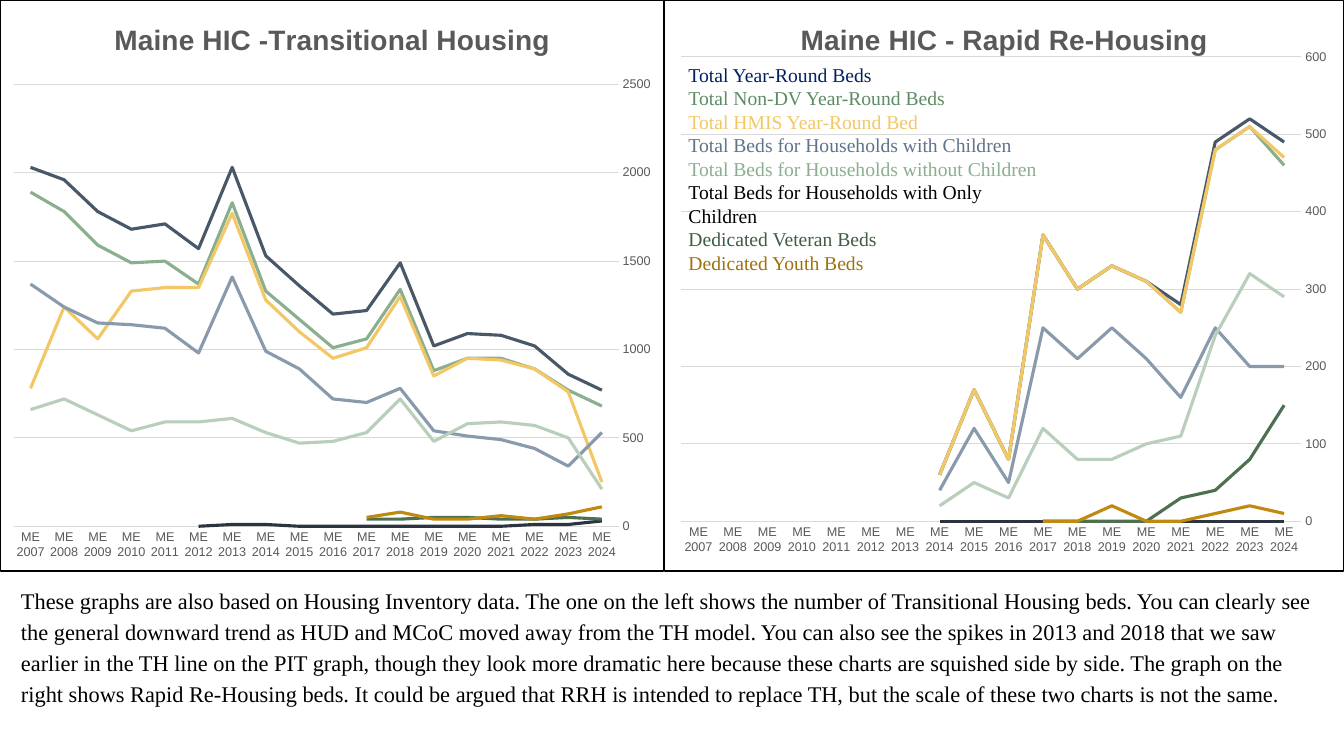
from lxml import etree
from pptx import Presentation
from pptx import util as u
from pptx.chart import data as cd
from pptx.dml.color import RGBColor
from pptx.enum import chart as ec
from pptx.oxml import parse_xml
from pptx.oxml.ns import nsdecls, qn

# Content
YEARS = [f"ME {year}" for year in range(2024, 2006, -1)]
HUES = ["495869", "8AAF8E", "F3C766", "899AAD",
        "B9CFBB", "2C353F", "4C7050", "C0890F"]
# Values run from 2024 back; years without data are left off the end
CHARTS = [
    {"title": "Maine HIC -Transitional Housing",
     "left": 0, "width": 6.59, "top": 2500, "step": 500, "plot": None,
     "rows": [
         [770, 860, 1020, 1080, 1090, 1020, 1490, 1220, 1200,
          1360, 1530, 2030, 1570, 1710, 1680, 1780, 1960, 2030],
         [680, 770, 890, 950, 950, 880, 1340, 1060, 1010,
          1170, 1330, 1830, 1370, 1500, 1490, 1590, 1780, 1890],
         [250, 760, 890, 940, 950, 850, 1300, 1010, 950,
          1100, 1280, 1770, 1350, 1350, 1330, 1060, 1240, 780],
         [530, 340, 440, 490, 510, 540, 780, 700, 720,
          890, 990, 1410, 980, 1120, 1140, 1150, 1240, 1370],
         [210, 500, 570, 590, 580, 480, 720, 530, 480,
          470, 530, 610, 590, 590, 540, 630, 720, 660],
         [30, 10, 10, 0, 0, 0, 0, 0, 0, 0, 10, 10, 0],
         [40, 50, 40, 40, 50, 50, 40, 40],
         [110, 70, 40, 60, 40, 40, 80, 50]]},
    {"title": "Maine HIC - Rapid Re-Housing",
     "left": 6.59, "width": 6.74, "top": 600, "step": 100,
     "plot": {"x": 0.024, "y": 0.099, "w": 0.914, "h": 0.814},
     "rows": [
         [490, 520, 490, 280, 310, 330, 300, 370, 80, 170, 60],
         [460, 510, 480, 270, 310, 330, 300, 370, 80, 170, 60],
         [470, 510, 480, 270, 310, 330, 300, 370, 80, 170, 60],
         [200, 200, 250, 160, 210, 250, 210, 250, 50, 120, 40],
         [290, 320, 240, 110, 100, 80, 80, 120, 30, 50, 20],
         [0] * 11,
         [150, 80, 40, 30, 0, 0, 0, 0],
         [10, 20, 10, 0, 0, 20, 0, 0]]},
]
KEY = [
    ("Total Year-Round Beds", "002060"),
    ("Total Non-DV Year-Round Beds", "5F8B64"),
    ("Total HMIS Year-Round Bed", "F3C766"),
    ("Total Beds for Households with Children", "5F7389"),
    ("Total Beds for Households without Children", "8AAF8E"),
    ("Total Beds for Households with Only Children", "000000"),
    ("Dedicated Veteran Beds", "405D43"),
    ("Dedicated Youth Beds", "A0720D"),
]
NOTE = (
    "These graphs are also based on Housing Inventory data. The one on the "
    "left shows the number of Transitional Housing beds. You can clearly see "
    "the general downward trend as HUD and MCoC moved away from the TH model. "
    "You can also see the spikes in 2013 and 2018 that we saw earlier in the "
    "TH line on the PIT graph, though they look more dramatic here because "
    "these charts are squished side by side. The graph on the right shows "
    "Rapid Re-Housing beds. It could be argued that RRH is intended to replace "
    "TH, but the scale of these two charts is not the same."
)
SERIES = [
    "Total Year-Round Beds", "Total Non-DV Year-Round Beds",
]
GREY, RULE = "595959", "D9D9D9"


def put(item, **vals):
    for name, val in vals.items():
        setattr(item, name, val)


def ink(font, hue, **vals):
    put(font, **vals)
    font.color.rgb = RGBColor.from_string(hue)


def rule(line, hue, width):
    ink(line, hue, width=u.Pt(width))


def frame(chart):
    """Give the chart area a thin black border."""
    edge = parse_xml(
        f'<c:spPr {nsdecls("c", "a")}><a:ln w="9525"><a:solidFill>'
        '<a:srgbClr val="000000"/></a:solidFill></a:ln></c:spPr>')
    chart.element.find(qn("c:chart")).addnext(edge)


def place(chart, plot):
    """Fix the inner plot area as shares of the chart."""
    area = chart.element.find(".//" + qn("c:plotArea"))
    for old in area.findall(qn("c:layout")):
        area.remove(old)
    lay = etree.Element(qn("c:layout"))
    box = etree.SubElement(lay, qn("c:manualLayout"))
    tags = {"layoutTarget": "inner", "xMode": "edge", "yMode": "edge", **plot}
    for tag, val in tags.items():
        etree.SubElement(box, qn("c:" + tag)).set("val", str(val))
    area.insert(0, lay)


def draw(slide, info):
    data = cd.CategoryChartData()
    data.categories = YEARS
    for (name, _), row in zip(KEY, info["rows"]):
        data.add_series(name, row + [None] * (len(YEARS) - len(row)))
    chart = slide.shapes.add_chart(
        ec.XL_CHART_TYPE.LINE, u.Inches(info["left"]), 0,
        u.Inches(info["width"]), u.Inches(5.67), data).chart
    chart.has_legend = False
    ink(chart.font, "000000", name="Arial", size=u.Pt(10))

    # Title
    chart.has_title = True
    para = chart.chart_title.text_frame.paragraphs[0]
    run = para.add_run()
    run.text = info["title"]
    ink(run.font, GREY, name="Arial", size=u.Pt(20), bold=True)

    # Axes: years run right to left, so values sit on the right
    cats, vals = chart.category_axis, chart.value_axis
    for axis in (cats, vals):
        put(axis, major_tick_mark=ec.XL_TICK_MARK.NONE,
            minor_tick_mark=ec.XL_TICK_MARK.NONE)
        ink(axis.tick_labels.font, GREY, name="Arial", size=u.Pt(9))
    put(cats, reverse_order=True, has_major_gridlines=False)
    put(vals, minimum_scale=0, maximum_scale=info["top"],
        major_unit=info["step"], has_major_gridlines=True)
    rule(cats.format.line, RULE, 0.75)
    rule(vals.major_gridlines.format.line, RULE, 0.75)
    vals.format.line.fill.background()

    # Lines
    chart.plots[0].vary_by_categories = False
    for line, hue in zip(chart.plots[0].series, HUES):
        line.smooth = False
        line.marker.style = ec.XL_MARKER_STYLE.NONE
        rule(line.format.line, hue, 2.25)
    frame(chart)
    if info["plot"]:
        place(chart, info["plot"])


def write(slide, spot, lines, size, **look):
    box = slide.shapes.add_textbox(*map(u.Inches, spot))
    body = box.text_frame
    body.word_wrap = True
    for i, (words, hue) in enumerate(lines):
        para = body.add_paragraph() if i else body.paragraphs[0]
        put(para, **look)
        run = para.add_run()
        run.text = words
        ink(run.font, hue, name="Times New Roman", size=u.Pt(size))


def main():
    deck = Presentation()
    put(deck, slide_width=u.Inches(13.33), slide_height=u.Inches(7.5))
    slide = deck.slides.add_slide(deck.slide_layouts[6])
    for info in CHARTS:
        draw(slide, info)
    # Colour key and note
    write(slide, (6.73, 0.57, 3.78, 1.99), KEY, 14)
    write(slide, (0.11, 5.74, 13.15, 1.32), [(NOTE, "000000")], 16,
          line_spacing=1.15, space_after=u.Pt(8))
    deck.save("out.pptx")


if __name__ == "__main__":
    main()
